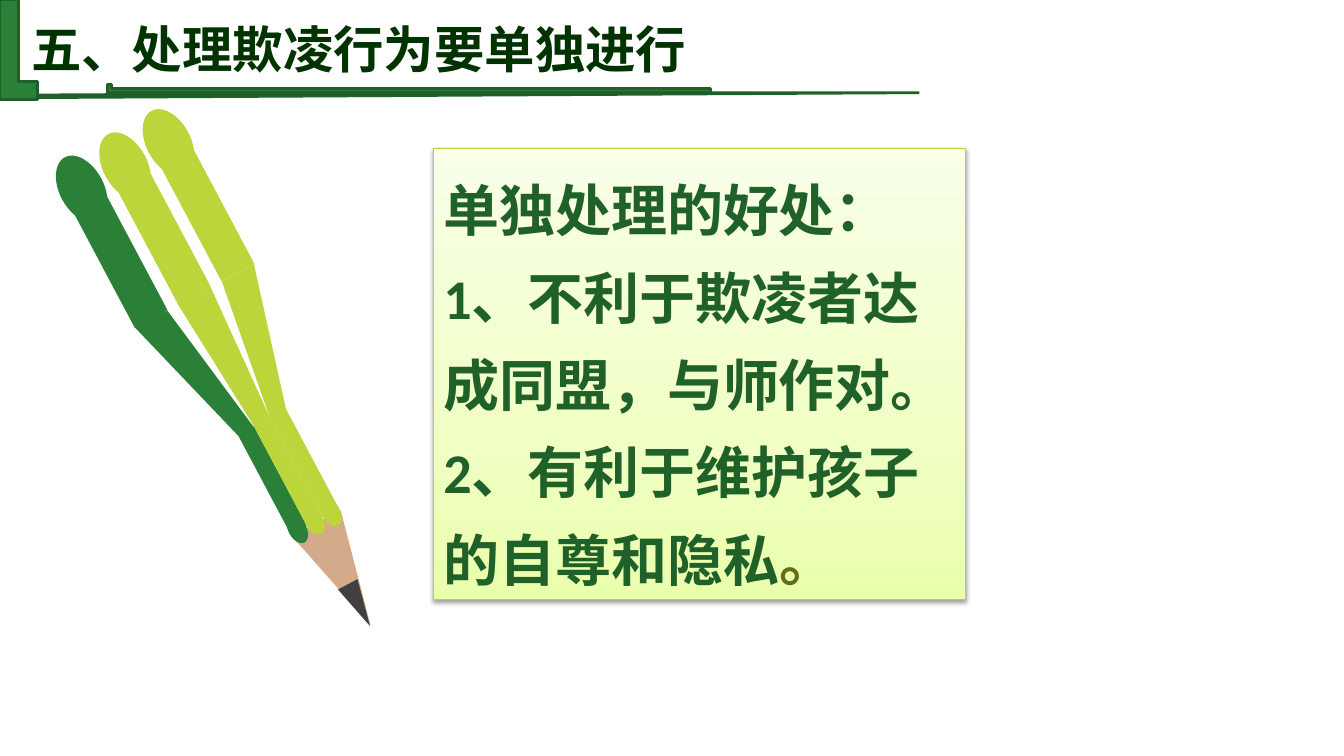
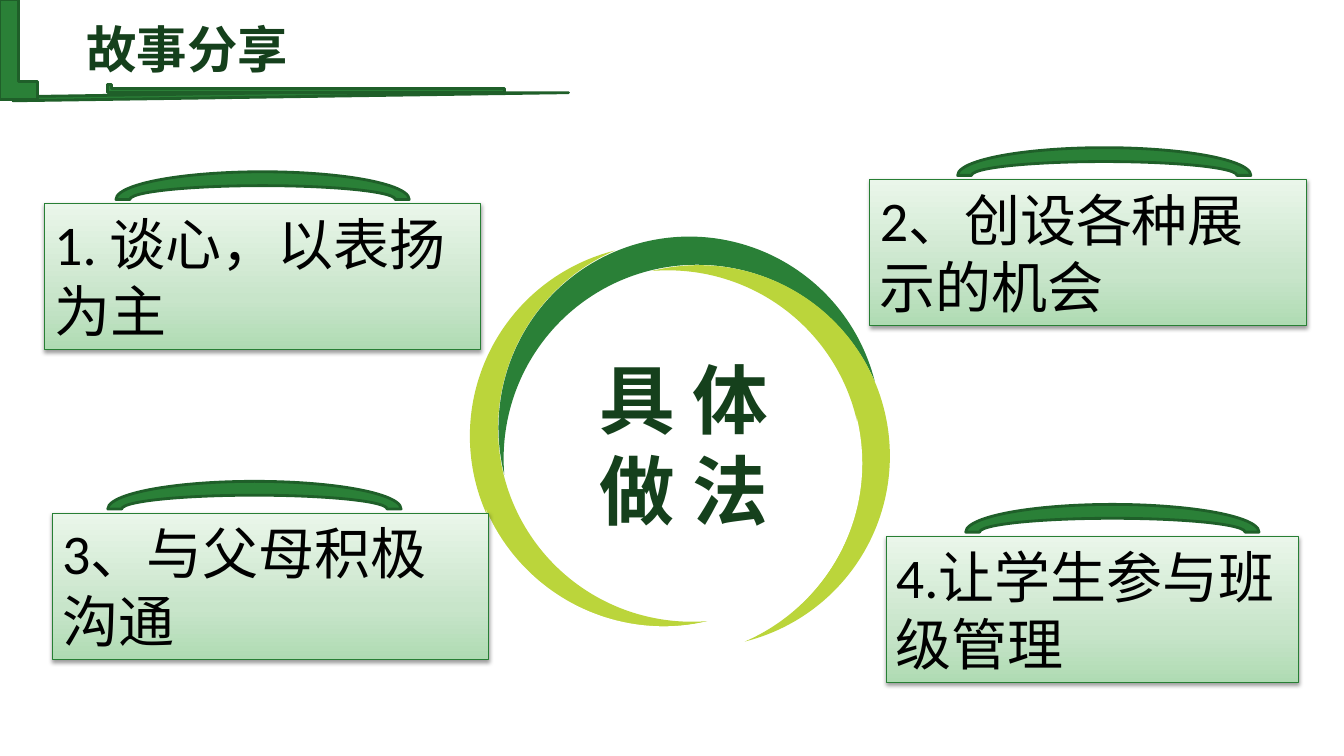
from pptx import Presentation
from pptx.dml.color import RGBColor as Rgb
from pptx.enum.shapes import MSO_SHAPE as Kind
from pptx.enum.text import MSO_ANCHOR as Anchor, MSO_AUTO_SIZE as Auto, PP_ALIGN as Align
from pptx.oxml import parse_xml
from pptx.oxml.ns import nsdecls, qn
from pptx.util import Pt

COLORS = {
    "green": "2A8037", "edge": "1F5F29", "lime": "BBD53B",
    "wood": "D3AB8B", "lead": "404040", "white": "FFFFFF",
    "black": "000000", "title": "003300", "dark": "15401C",
    "body": "206029", "olive": "617018", "moss": "277F34", "leaf": "B9D436",
}
GRADES = {
    "lime": ("EAFFAC", "F0FFC4", "F9FFE9"),
    "green": ("AFDBB3", "C8E5CA", "EAF6EA"),
}
FORMATS = {
    "title": {"name": "Calibri", "size": Pt(36), "bold": True},
    "body": {"name": "Calibri", "size": Pt(40), "bold": True},
    "card": {"name": "Calibri", "size": Pt(40), "bold": False},
    "hub": {"name": "Noto Sans CJK SC", "size": Pt(54), "bold": True},
}
BANDS = ("green", "lime", "lime")
TILT = 332


class Deck:
    """Holds the style and the current slide, and draws each kind of element."""

    def __init__(self):
        self.file = Presentation()
        self.file.slide_width, self.file.slide_height = Pt(960), Pt(540)
        self.slide = None

    def page(self):
        self.slide = self.file.slides.add_slide(self.file.slide_layouts[6])

    def color(self, name):
        return Rgb.from_string(COLORS[name])

    def paint(self, shape, fill, line=None, width=2):
        shape.shadow.inherit = False
        if fill:
            shape.fill.solid()
            shape.fill.fore_color.rgb = self.color(fill)
        if line:
            shape.line.color.rgb = self.color(line)
            shape.line.width = Pt(width)
        else:
            shape.line.fill.background()
        return shape

    def shape(self, kind, box, fill, line=None, turn=0, width=2):
        item = self.slide.shapes.add_shape(kind, *map(Pt, box))
        item.rotation = turn
        return self.paint(item, fill, line, width)

    def outline(self, points, fill):
        spots = [(Pt(x), Pt(y)) for x, y in points]
        form = self.slide.shapes.build_freeform(*spots[0])
        form.add_line_segments(spots[1:], close=True)
        self.paint(form.convert_to_shape(), fill)

    def text(self, shape, lines, style, align=Align.LEFT, space=None):
        frame = shape.text_frame
        frame.word_wrap = True
        frame.auto_size = Auto.SHAPE_TO_FIT_TEXT
        for i, line in enumerate(lines):
            para = frame.add_paragraph() if i else frame.paragraphs[0]
            para.alignment = align
            if space:
                para.line_spacing = space
            for words, color in line:
                run = para.add_run()
                run.text = words
                for key, value in FORMATS[style].items():
                    setattr(run.font, key, value)
                run.font.color.rgb = self.color(color)
                east = parse_xml(f'<a:ea {nsdecls("a")} typeface="Noto Sans CJK SC"/>')
                run._r.get_or_add_rPr().append(east)

    def card(self, box, grade, line, lines, style, space=None):
        item = self.shape(Kind.RECTANGLE, box, None, line, width=0.75)
        stops = "".join(
            f'<a:gs pos="{spot}"><a:srgbClr val="{tone}"/></a:gs>'
            for spot, tone in zip((0, 35000, 100000), GRADES[grade]))
        props = item._element.spPr
        props.insert(2, parse_xml(
            f'<a:gradFill {nsdecls("a")} rotWithShape="1"><a:gsLst>{stops}</a:gsLst>'
            '<a:lin ang="16200000" scaled="0"/></a:gradFill>'))
        props.find(qn("a:effectLst")).append(parse_xml(
            f'<a:outerShdw {nsdecls("a")} blurRad="{Pt(3.1)}" dist="{Pt(1.6)}" dir="5400000" '
            'rotWithShape="0"><a:srgbClr val="000000"><a:alpha val="38000"/></a:srgbClr></a:outerShdw>'))
        self.text(item, lines, style, space=space)

    def row(self, kind, box, step):
        x, y, w, h = box
        for i, fill in enumerate(BANDS):
            self.shape(kind, (x + i * step[0], y + i * step[1], w, h), fill, turn=TILT)

    def pencil(self):
        bends = (
            ((169.9, 311), (95.8, 233.3), (119.5, 221.8), (181.4, 305.3)),
            ((182.9, 306.7), (126.7, 216.7), (150.5, 205.2), (193.7, 300.2)),
            ((193, 298.8), (158.4, 200.9), (181.4, 188.6), (204.5, 293)),
        )
        for points, fill in zip(bends, BANDS):
            self.outline(points, fill)
        for box, fill in (((225.4, 368.6, 39.6, 82.8), "wood"),
                          ((248.4, 415.4, 15.8, 33.8), "lead")):
            self.shape(Kind.ISOSCELES_TRIANGLE, box, fill, turn=TILT - 180)
        self.row(Kind.RECTANGLE, (188, 303, 13, 80), (11.5, -6.1))
        self.row(Kind.RECTANGLE, (72.7, 139.7, 26.6, 93.6), (31, -16.6))
        self.row(Kind.OVAL, (205.9, 367.2, 13, 21.6), (11.9, -6.1))
        self.row(Kind.OVAL, (42.5, 109.4, 31.7, 51.1), (31, -16.6))

    def head(self, words, color, left, width, stripe, bar):
        box = self.slide.shapes.add_textbox(*map(Pt, (left, 9.4, width, 51.1)))
        box.text_frame.vertical_anchor = Anchor.TOP
        self.text(box, [[(words, color)]], "title")
        for kind, place in ((Kind.DIAGONAL_STRIPE, (9.4, 66.2, *stripe)),
                            (Kind.CORNER, (77, 60.5, bar, 5.8)),
                            (Kind.CORNER, (0, 0, 26.6, 71.3))):
            self.shape(kind, place, "green", "edge")

    def ring(self):
        moons = ((337.7, 191.5, "lime"), (407.5, 103, "green"),
                 (496.8, 172.8, "lime"), (427.7, 260.6, "white"))
        for i, (x, y, fill) in enumerate(moons):
            turn = (345.9 + 90 * i) % 360
            moon = self.shape(Kind.MOON, (x, y, 136.8, 272.9), fill, turn=turn)
            moon.adjustments[0] = 0.152
        hub = self.shape(Kind.RECTANGLE, (417.6, 247.7, 141.8, 138.2), "white", "white")
        self.text(hub, [[("具 体做 法", "dark")]], "hub", Align.CENTER)

    def tip(self, x, y, width, arc, words):
        self.card((x, y, width, 104.4), "green", "moss", [[(words, "black")]], "card")
        self.shape(Kind.BLOCK_ARC, (arc, y - 22.7, 209.5, 39.6), "green", "edge")


def main():
    deck = Deck()
    deck.page()
    deck.pencil()
    deck.card((309.6, 105.8, 380.2, 322.6), "lime", "leaf", [
        [("单独处理的好处：", "body")],
        [("1、不利于欺凌者达成同盟，与师作对。", "body")],
        [("2、有利于维护孩子的自尊和隐私", "body"), ("。", "olive")],
    ], "body", 1.3)
    deck.head("五、处理欺凌行为要单独进行", "title", 15.1, 527, (646.6, 3.6), 430.6)

    deck.page()
    deck.ring()
    for tip in ((31.7, 145.4, 311.8, 82.8, "1. 谈心，以表扬为主"),
                (621.4, 128.2, 311.8, 684, "2、创设各种展示的机会"),
                (37.4, 366.5, 311.8, 77, "3、与父母积极沟通"),
                (632.9, 383, 294.5, 689.8, "4.让学生参与班级管理")):
        deck.tip(*tip)
    deck.head("故事分享", "dark", 54.7, 160, (396.7, 5.8), 283.7)
    deck.file.save("out.pptx")


if __name__ == "__main__":
    main()
